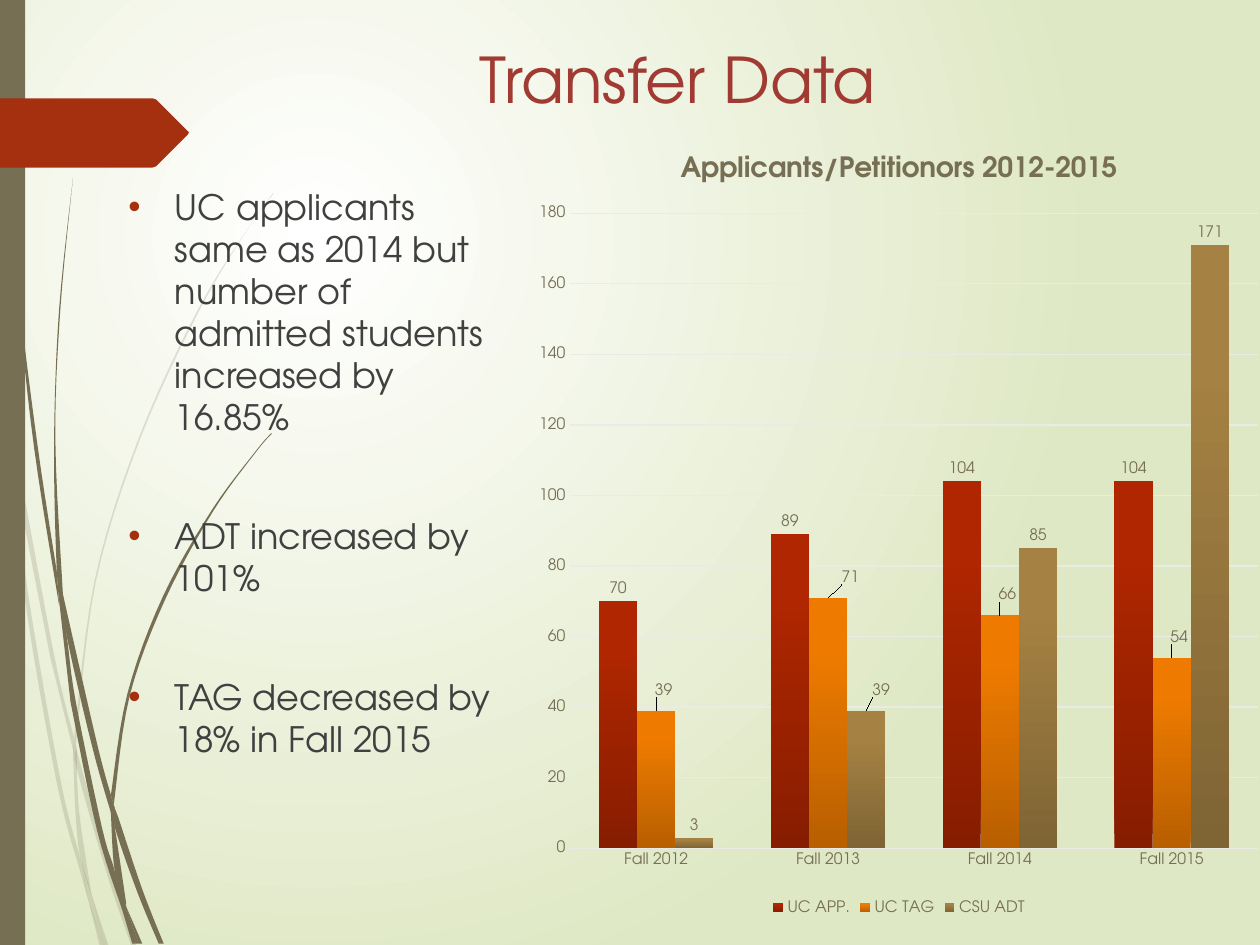
from dataclasses import dataclass, field

import pptx
import pptx.chart.data
import pptx.dml.color
import pptx.enum.chart
import pptx.enum.shapes
import pptx.enum.text
import pptx.oxml
import pptx.oxml.ns
import pptx.util
from pptx.util import Inches

FONT = "TeX Gyre Adventor"
OLIVE = pptx.dml.color.RGBColor(0x76, 0x6F, 0x54)
RUST = pptx.dml.color.RGBColor(0xA5, 0x30, 0x10)
TITLE_RED = pptx.dml.color.RGBColor(0xA0, 0x3A, 0x32)
BODY_GREY = pptx.dml.color.RGBColor(0x40, 0x40, 0x40)
GRID_GREY = pptx.dml.color.RGBColor(0xEC, 0xEA, 0xE4)
WHITE = pptx.dml.color.RGBColor(0xFF, 0xFF, 0xFF)
PALE_GREEN = pptx.dml.color.RGBColor(0xDF, 0xE8, 0xC4)

Points = list[tuple[float, float]]


@dataclass
class Strand:
    """A blade of grass: one edge out, the other edge back."""
    out: Points
    back: Points


@dataclass
class Bars:
    name: str
    values: list[int]
    shades: list[str]  # from the foot of the bar to its top
    label_shifts: dict[int, float] = field(default_factory=dict)


FAINT_STRANDS = [
    Strand([(0.08, 3.5), (0.06, 3.22), (0, 2.82)], [(0, 2.99), (0.08, 3.5)]),
    Strand([(0.4, 5.22), (0.59, 5.99)], [(0.59, 5.86), (0.43, 5.2), (0.1, 3.45), (0.12, 3.76), (0.4, 5.22)]),
    Strand([(0.61, 5.96), (0.61, 6.1), (0.85, 6.94), (1.04, 7.5)], [(1.08, 7.5), (0.88, 6.92), (0.64, 6.07)]),
    Strand([(0.73, 7.11), (0.83, 7.5)], [(0.86, 7.5), (0.73, 7.11)]),
    Strand([(0.7, 7.14), (0.64, 6.83), (0.48, 6.19), (0.22, 4.69), (0.12, 3.76), (0.08, 3.5)],
           [(0.08, 3.5), (0.19, 4.7), (0.45, 6.21), (0.64, 6.93)]),
    Strand([(0.58, 5.99), (0.6, 6.46), (0.64, 6.83), (0.73, 7.11)], [(0.72, 7.06), (0.63, 6.46), (0.61, 6.08)]),
    Strand([(0.61, 5.96), (0.61, 5.84), (0.76, 4.62), (1.11, 3.49), (1.59, 2.45), (2.01, 1.75), (2.17, 1.54)],
           [(2.17, 1.53), (2.01, 1.75), (1.58, 2.44), (1.1, 3.48), (0.75, 4.61), (0.59, 5.84)]),
    Strand([(0.7, 7.14), (0.79, 7.5)], [(0.82, 7.5), (0.7, 7.14)]),
    Strand([(0.61, 6.1), (0.61, 5.96), (0.59, 5.86)], [(0.58, 5.99), (0.61, 6.08)]),
    Strand([(0.65, 6.83), (0.7, 7.14), (0.82, 7.5)], [(0.83, 7.5), (0.73, 7.11), (0.67, 6.92)]),
]
STRONG_STRANDS = [
    Strand([(0.02, 0), (0.05, 1.1), (0.14, 2.33), (0.27, 3.55), (0.47, 4.81)],
           [(0.45, 4.53), (0.3, 3.55), (0.15, 2.32), (0.06, 1.09), (0.03, 0)]),
    Strand([(0.5, 4.72), (0.53, 5.05), (0.73, 5.92), (0.88, 6.45)], [(0.88, 6.31), (0.77, 5.9), (0.5, 4.72)]),
    Strand([(0.91, 6.41), (0.91, 6.56), (1.09, 7.08), (1.26, 7.49)], [(1.3, 7.49), (1.13, 7.06), (0.94, 6.49)]),
    Strand([(0.97, 7.22), (0.91, 6.91), (0.81, 6.57), (0.6, 5.56), (0.53, 5.05), (0.47, 4.77)],
           [(0.56, 5.57), (0.77, 6.59), (0.97, 7.22)]),
    Strand([(0.5, 4.72), (0.44, 3.49), (0.48, 2.45), (0.58, 1.41)],
           [(0.58, 1.41), (0.47, 2.45), (0.43, 3.49), (0.45, 4.49), (0.49, 4.72)]),
    Strand([(1, 7.19), (1.1, 7.49)], [(1.13, 7.49), (1, 7.19)]),
    Strand([(0.45, 4.49), (0.47, 4.77), (0.53, 5.05)], [(0.5, 4.72), (0.45, 4.49)]),
    Strand([(0.91, 6.41), (0.91, 6.33), (1.03, 5.52), (1.31, 4.76), (1.69, 4.06), (2.03, 3.59), (2.16, 3.44)],
           [(2.15, 3.44), (2.03, 3.58), (1.68, 4.05), (1.29, 4.74), (1.01, 5.51), (0.88, 6.31)]),
    Strand([(0.97, 7.22), (1.05, 7.49)], [(1.08, 7.49), (0.97, 7.22)]),
    Strand([(0.88, 6.45), (0.91, 6.91), (1, 7.19)], [(1, 7.16), (0.91, 6.56), (0.88, 6.45)]),
    Strand([(0.88, 6.45), (0.91, 6.56)], [(0.91, 6.41), (0.88, 6.31)]),
    Strand([(0.91, 6.91), (0.97, 7.22), (1.08, 7.49)], [(1.1, 7.49), (1, 7.19), (0.91, 6.91)]),
]
ARROW = [(0, 0.78), (1.21, 0.78), (1.24, 0.79), (1.49, 1.04), (1.5, 1.05), (1.49, 1.07),
         (1.24, 1.32), (1.21, 1.33), (0, 1.33)]
FINDINGS = [
    "UC applicants same as 2014 but number of admitted students increased by 16.85%",
    "ADT increased by 101%",
    "TAG decreased by 18% in Fall 2015",
]
TERMS = ["Fall 2012", "Fall 2013", "Fall 2014", "Fall 2015"]
SERIES = [
    Bars("UC APP.", [70, 89, 104, 104], ["871D00", "AF2600", "B02600"]),
    Bars("UC TAG", [39, 71, 66, 54], ["B85F00", "EE7B00", "EF7B00"], {0: 0.01, 1: 0.03, 2: 0.01, 3: 0.01}),
    Bars("CSU ADT", [3, 39, 85, 171], ["7F6434", "A58243", "A88342"], {1: 0.02}),
]


def smooth(points: Points, steps: int = 6) -> Points:
    """Run a Catmull-Rom curve through the points."""
    padded = [points[0], *points, points[-1]]
    curve = [points[0]]
    for a, b, c, d in zip(padded, padded[1:], padded[2:], padded[3:]):
        for step in range(1, steps + 1):
            t = step / steps
            curve.append(tuple(
                q + t * (r - p) / 2 + t**2 * (2 * p - 5 * q + 4 * r - s) / 2 + t**3 * (3 * q - p - 3 * r + s) / 2
                for p, q, r, s in zip(a, b, c, d)))
    return curve


def paint(shape, color, opacity: int = 100) -> None:
    shape.shadow.inherit = False
    shape.fill.solid()
    shape.fill.fore_color.rgb = color
    shape.line.fill.background()
    if opacity < 100:
        tint = shape._element.spPr.find(".//" + pptx.oxml.ns.qn("a:srgbClr"))
        alpha = tint.makeelement(pptx.oxml.ns.qn("a:alpha"), {"val": str(opacity * 1000)})
        tint.append(alpha)


def add_outline(page, points: Points, color, opacity: int = 100) -> None:
    start, *rest = [(Inches(x), Inches(y)) for x, y in points]
    builder = page.shapes.build_freeform(*start)
    builder.add_line_segments(rest)
    paint(builder.convert_to_shape(), color, opacity)


def fill_gradient(fill, element, stops: list[tuple[int, str]], direction: str) -> None:
    fill.solid()
    solid = element.find(".//" + pptx.oxml.ns.qn("a:solidFill"))
    stop_xml = "".join(f'<a:gs pos="{pos * 1000}"><a:srgbClr val="{color}"/></a:gs>' for pos, color in stops)
    solid.getparent().replace(solid, pptx.oxml.parse_xml(
        f'<a:gradFill {pptx.oxml.ns.nsdecls("a")} rotWithShape="1"><a:gsLst>{stop_xml}</a:gsLst>{direction}</a:gradFill>'))


def style_font(font, size: float, color, bold: bool = False) -> None:
    font.name, font.size, font.bold = FONT, pptx.util.Pt(size), bold
    font.color.rgb = color


def manual_layout(**fractions: float):
    parts = "".join(f'<c:{key} val="{value}"/>' for key, value in fractions.items())
    target = '<c:layoutTarget val="inner"/><c:xMode val="edge"/><c:yMode val="edge"/>' if "w" in fractions else ""
    return pptx.oxml.parse_xml(
        f'<c:layout {pptx.oxml.ns.nsdecls("c")}><c:manualLayout>{target}{parts}</c:manualLayout></c:layout>')


def add_text(page, left: float, top: float, width: float, height: float, lines: list[str], size: float, color):
    box = page.shapes.add_textbox(Inches(left), Inches(top), Inches(width), Inches(height))
    frame = box.text_frame
    frame.word_wrap = True
    frame.text = "\n".join(lines)
    for para in frame.paragraphs:
        style_font(para.runs[0].font, size, color)
    return frame


def add_bullet(para) -> None:
    props = para._p.get_or_add_pPr()
    props.set("marL", str(Inches(0.37)))
    props.set("indent", str(-Inches(0.37)))
    for xml in (f'<a:buClr {pptx.oxml.ns.nsdecls("a")}><a:srgbClr val="{RUST}"/></a:buClr>',
                f'<a:buFont {pptx.oxml.ns.nsdecls("a")} typeface="Arial"/>',
                f'<a:buChar {pptx.oxml.ns.nsdecls("a")} char="•"/>'):
        props.append(pptx.oxml.parse_xml(xml))


def add_bar_chart(page) -> None:
    data = pptx.chart.data.CategoryChartData()
    data.categories = TERMS
    for bars in SERIES:
        data.add_series(bars.name, bars.values)
    chart = page.shapes.add_chart(pptx.enum.chart.XL_CHART_TYPE.COLUMN_CLUSTERED, Inches(4.17), Inches(1),
                                  Inches(5.93), Inches(6.3), data).chart
    style_font(chart.font, 9, OLIVE)
    chart.has_title = True
    chart.chart_title.text_frame.text = "Applicants/Petitionors 2012-2015"
    style_font(chart.chart_title.text_frame.paragraphs[0].runs[0].font, 16, OLIVE, bold=True)
    chart.has_legend = True
    chart.legend.position = pptx.enum.chart.XL_LEGEND_POSITION.BOTTOM
    chart.legend.include_in_layout = False
    style_font(chart.legend.font, 9, OLIVE)

    # Axes
    for axis in (chart.category_axis, chart.value_axis):
        axis.major_tick_mark = axis.minor_tick_mark = pptx.enum.chart.XL_TICK_MARK.NONE
        style_font(axis.tick_labels.font, 9, OLIVE)
    values = chart.value_axis
    values.minimum_scale, values.maximum_scale, values.major_unit = 0, 180, 20
    values.format.line.fill.background()
    for line in (chart.category_axis.format.line, values.major_gridlines.format.line):
        line.color.rgb = GRID_GREY
        line.width = pptx.util.Pt(0.75)

    # Bars and their labels
    plot = chart.plots[0]
    plot.gap_width, plot.overlap, plot.vary_by_categories = 150, 0, False
    for bars, series in zip(SERIES, plot.series):
        fill_gradient(series.format.fill, series._element, list(zip((0, 80, 100), bars.shades)),
                      '<a:lin ang="16200000" scaled="0"/>')
        labels = series.data_labels
        labels.show_value = True
        labels.position = pptx.enum.chart.XL_LABEL_POSITION.OUTSIDE_END
        style_font(labels.font, 9, OLIVE)
        for index, shift in bars.label_shifts.items():
            label = series.points[index].data_label
            label.position = pptx.enum.chart.XL_LABEL_POSITION.OUTSIDE_END
            style_font(label.font, 9, OLIVE)
            label._dLbl.insert(1, manual_layout(x=shift, y=-0.01))
    area = chart._chartSpace.chart.plotArea
    for old in area.findall(pptx.oxml.ns.qn("c:layout")):
        area.remove(old)
    area.insert(0, manual_layout(x=0.06, y=0.11, w=0.92, h=0.8))


def main() -> None:
    deck = pptx.Presentation()
    deck.slide_width, deck.slide_height = Inches(10), Inches(7.5)
    page = deck.slides.add_slide(deck.slide_layouts[6])
    fill_gradient(page.background.fill, page._element, [(0, str(WHITE)), (100, str(PALE_GREEN))],
                  '<a:path path="circle"><a:fillToRect l="50000" t="50000" r="100000" b="100000"/></a:path>')

    # Grass, side band and arrow
    for strands, opacity in ((FAINT_STRANDS, 20), (STRONG_STRANDS, 100)):
        for strand in strands:
            add_outline(page, smooth(strand.out) + smooth(strand.back), OLIVE, opacity)
    band = page.shapes.add_shape(pptx.enum.shapes.MSO_SHAPE.RECTANGLE, 0, 0, Inches(0.2), Inches(7.5))
    paint(band, OLIVE)
    add_outline(page, ARROW, RUST)

    # Title and findings
    title = add_text(page, 1.92, 0.25, 6.92, 0.75, ["Transfer Data"], 36, TITLE_RED)
    title.vertical_anchor = pptx.enum.text.MSO_ANCHOR.MIDDLE
    title.paragraphs[0].alignment = pptx.enum.text.PP_ALIGN.CENTER
    findings = add_text(page, 0.92, 1.42, 3.08, 5.42, FINDINGS, 20, BODY_GREY)
    findings.margin_right = Inches(0.05)
    for index, para in enumerate(findings.paragraphs):
        para.space_before = pptx.util.Pt(44 if index else 0)
        add_bullet(para)

    add_bar_chart(page)
    deck.save("out.pptx")


if __name__ == "__main__":
    main()
